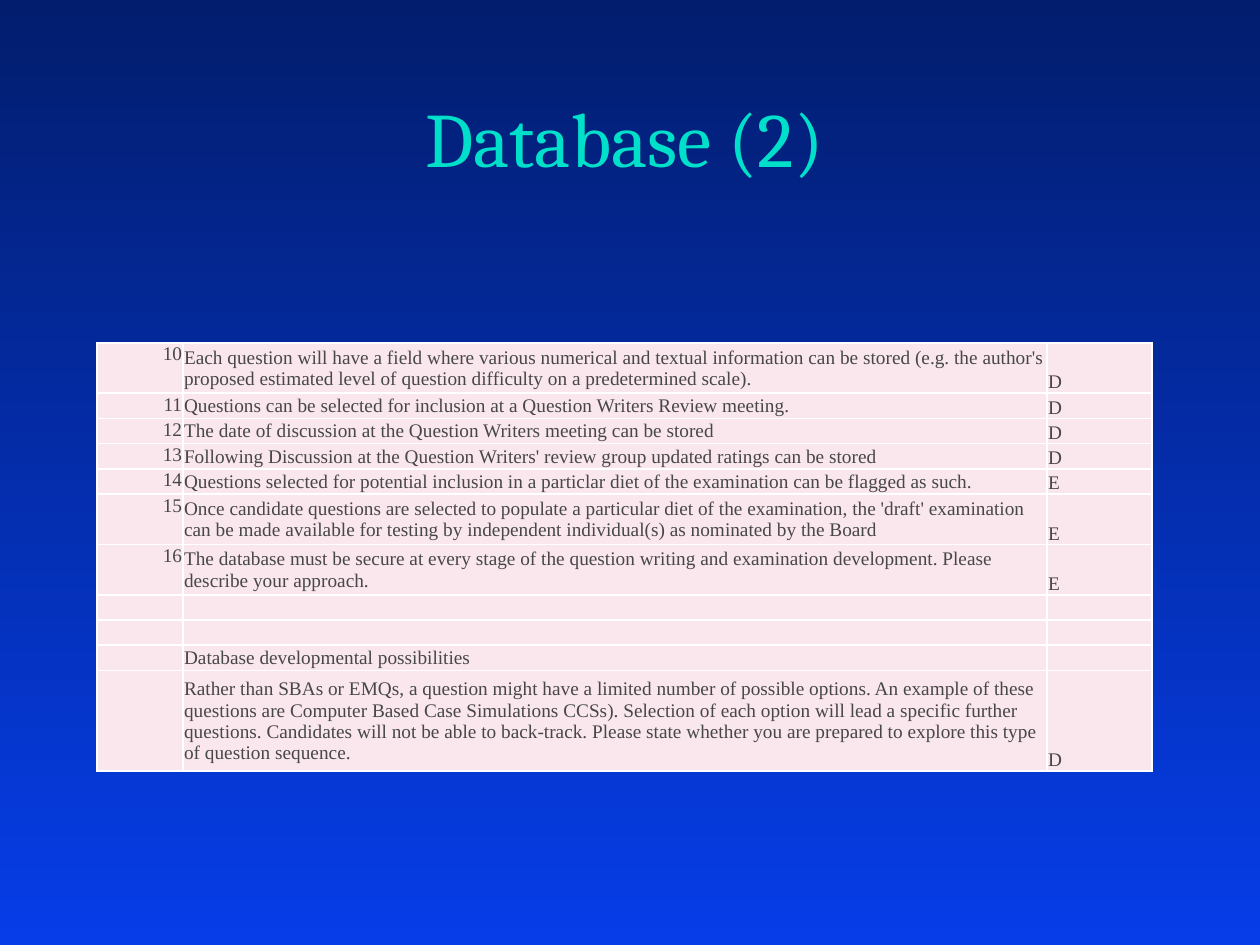
from lxml import etree
from pptx import Presentation
from pptx.dml.color import RGBColor
from pptx.enum.text import MSO_ANCHOR, PP_ALIGN
from pptx.oxml.ns import qn
from pptx.util import Cm, Pt

LEFT, CENTER, RIGHT = PP_ALIGN.LEFT, PP_ALIGN.CENTER, PP_ALIGN.RIGHT
TOP, MIDDLE, BOTTOM = MSO_ANCHOR.TOP, MSO_ANCHOR.MIDDLE, MSO_ANCHOR.BOTTOM

NAVY = RGBColor(0x02, 0x1D, 0x6E)
BLUE = RGBColor(0x06, 0x3D, 0xE8)
TURQUOISE = RGBColor(0x00, 0xDF, 0xCA)
PINK = RGBColor(0xF9, 0xE7, 0xED)
WHITE = RGBColor(0xFF, 0xFF, 0xFF)
GREY = RGBColor(0x47, 0x47, 0x47)

BODY_SIZE = 11
LINE_HEIGHT = 0.508
COL_WIDTHS = (1.73, 17.42, 2.11)
COL_FORMATS = ((RIGHT, TOP), (LEFT, MIDDLE), (LEFT, BOTTOM))

# Height in lines, number, requirement, rating
ROWS = (
    (2, "10", "Each question will have a field where various numerical and textual "
     "information can be stored (e.g. the author's proposed estimated level of "
     "question difficulty on a predetermined scale).", "D"),
    (1, "11", "Questions can be selected for inclusion at a Question Writers Review "
     "meeting.", "D"),
    (1, "12", "The date of discussion at the Question Writers meeting can be stored", "D"),
    (1, "13", "Following Discussion at the Question Writers' review group updated "
     "ratings can be stored", "D"),
    (1, "14", "Questions selected for potential inclusion in a particlar diet of the "
     "examination can be flagged as such.", "E"),
    (2, "15", "Once candidate questions are selected to populate a particular diet of "
     "the examination, the 'draft' examination can be made available for testing by "
     "independent individual(s) as nominated by the Board", "E"),
    (2, "16", "The database must be secure at every stage of the question writing and "
     "examination development. Please describe your approach.", "E"),
    (1, "", "", ""),
    (1, "", "", ""),
    (1, "", "Database developmental possibilities", ""),
    (4, "", "Rather than SBAs or EMQs, a question might have a limited number of "
     "possible options. An example of these questions are Computer Based Case "
     "Simulations CCSs). Selection of each option will lead a specific further "
     "questions. Candidates will not be able to back-track. Please state whether you "
     "are prepared to explore this type of question sequence.", "D"),
)


def set_text(tf, text, *, size, font, color, align):
    p = tf.paragraphs[0]
    p.alignment = align
    if not text:
        # Keeps an empty cell as low as a line of text
        p._p.get_or_add_endParaRPr().set("sz", str(size * 100))
        return
    r = p.add_run()
    r.text = text
    r.font.size = Pt(size)
    r.font.name = font
    r.font.color.rgb = color


def set_borders(cell, color, width):
    tc_pr = cell._tc.get_or_add_tcPr()
    for i, side in enumerate(("lnL", "lnR", "lnT", "lnB")):
        ln = etree.Element(qn(f"a:{side}"), w=str(Pt(width)))
        fill = etree.SubElement(ln, qn("a:solidFill"))
        etree.SubElement(fill, qn("a:srgbClr"), val=str(color))
        tc_pr.insert(i, ln)


def set_background(s):
    fill = s.background.fill
    fill.gradient()
    fill.gradient_angle = 270
    for stop, color in zip(fill.gradient_stops, (NAVY, BLUE)):
        stop.color.rgb = color


def add_title(s, text):
    sp = s.shapes.title
    sp.left, sp.top, sp.width, sp.height = Cm(1.7), Cm(0.64), Cm(21.79), Cm(3.18)
    sp.text_frame.vertical_anchor = BOTTOM
    set_text(sp.text_frame, text, size=44, font="Cambria", color=TURQUOISE, align=CENTER)


def format_cell(cell, text, align, anchor):
    cell.fill.solid()
    cell.fill.fore_color.rgb = PINK
    cell.margin_left = cell.margin_right = cell.margin_top = Cm(0.02)
    cell.margin_bottom = 0
    cell.vertical_anchor = anchor
    set_borders(cell, WHITE, 1)
    set_text(cell.text_frame, text, size=BODY_SIZE, font="Times New Roman",
             color=GREY, align=align)


def add_requirements(s):
    height = LINE_HEIGHT * sum(row[0] for row in ROWS)
    table = s.shapes.add_table(len(ROWS), len(COL_WIDTHS), Cm(1.96), Cm(6.91),
                               Cm(sum(COL_WIDTHS)), Cm(height)).table
    table.first_row = table.horz_banding = False
    for col, width in zip(table.columns, COL_WIDTHS):
        col.width = Cm(width)
    for row, (lines, *texts) in zip(table.rows, ROWS):
        row.height = Cm(LINE_HEIGHT * lines)
        for cell, text, (align, anchor) in zip(row.cells, texts, COL_FORMATS):
            format_cell(cell, text, align, anchor)


def main():
    prs = Presentation()
    prs.slide_width, prs.slide_height = Cm(25.4), Cm(19.05)
    s = prs.slides.add_slide(prs.slide_layouts[5])
    set_background(s)
    add_title(s, "Database (2)")
    add_requirements(s)
    prs.save("out.pptx")


if __name__ == "__main__":
    main()
